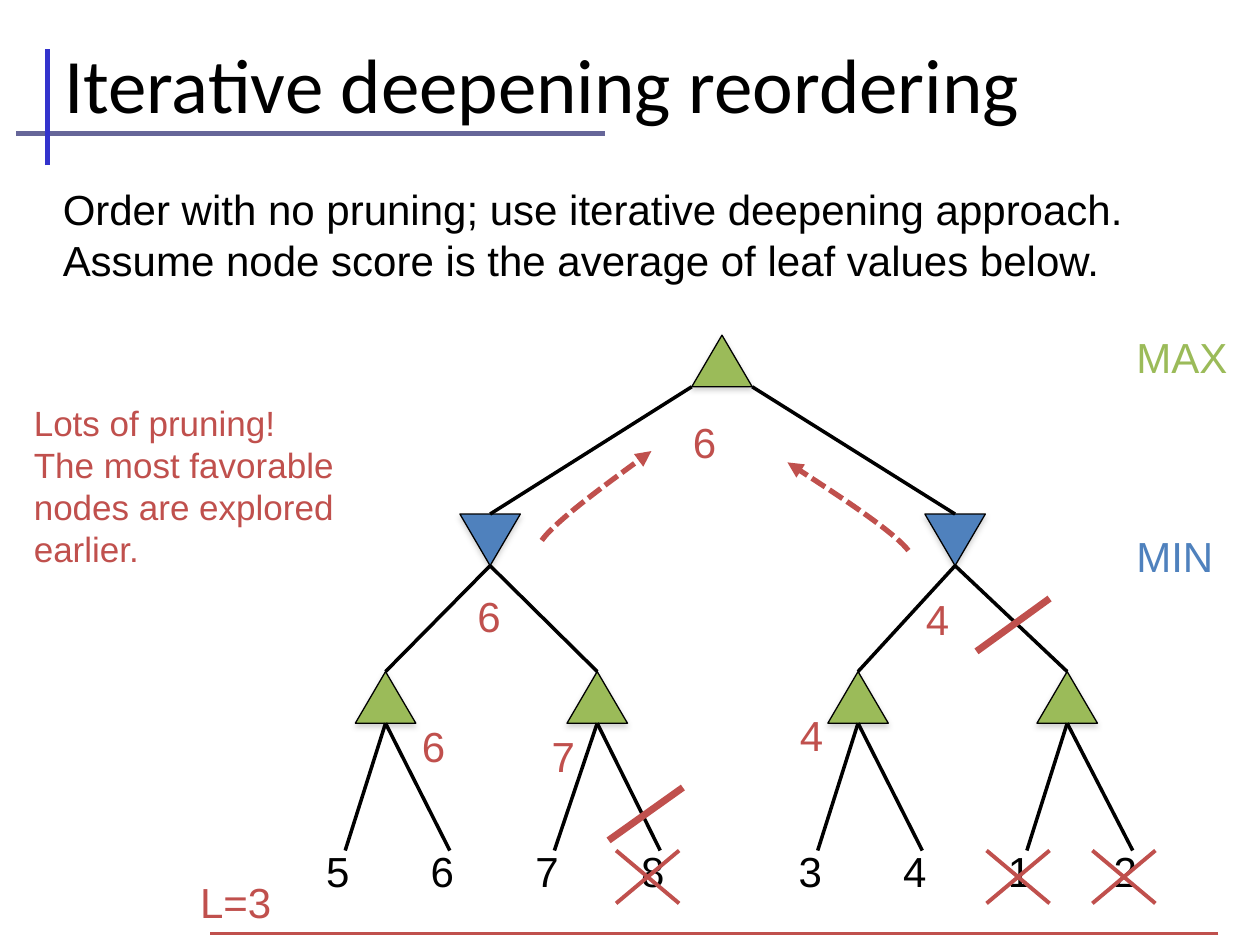
from lxml import etree
from pptx import Presentation
from pptx.dml.color import RGBColor
from pptx.enum.dml import MSO_LINE
from pptx.enum.shapes import MSO_CONNECTOR, MSO_SHAPE
from pptx.enum.text import MSO_ANCHOR, MSO_AUTO_SIZE
from pptx.oxml.ns import qn
from pptx.util import Inches, Pt

LINE = MSO_CONNECTOR.STRAIGHT
TRI = MSO_SHAPE.ISOSCELES_TRIANGLE
DASH = MSO_LINE.SQUARE_DOT
MID = MSO_ANCHOR.MIDDLE
GROW = MSO_AUTO_SIZE.SHAPE_TO_FIT_TEXT

WIDE, HIGH = Inches(10), Inches(7.5)
COLS = 100
BLACK, RED, GREEN, BLUE = "000000", "C0504D", "9BBB59", "4F81BD"
TRI_W, TRI_H = 4.8, 4.1
ROOT_X, ROOT_Y = 57.3, 26.6
MIN_Y, MAX_Y, LEAF_Y = 40.8, 53.3, 67.5
TREE = [
    (38.9, [(30.6, [(27.4, "5"), (35.7, "6")]),
            (47.4, [(44, "7"), (52.4, "8")])]),
    (75.8, [(68.1, [(64.9, "3"), (73.2, "4")]),
            (84.7, [(81.5, "1"), (89.9, "2")])]),
]
SCORES = [(54, 32.6, "6"), (36.9, 46.4, "6"), (72.5, 46.6, "4"),
          (32.5, 56.7, "6"), (42.8, 57.5, "7"), (62.5, 55.8, "4")]
CUTS = [(83.3, 47.5, 77.5, 51.7), (54.2, 62.5, 48.3, 66.7)]
CROSSES = [48.9, 78.3, 86.7]
CURVES = [
    [(43, 42.9), (44.1, 41.3), (51.7, 35.8), (51.7, 35.8)],
    [(72.1, 43.7), (70.9, 42.1), (62.5, 36.7), (62.5, 36.7)],
]


def grid(*vals):
    return [round(val * WIDE / COLS) for val in vals]


def tint(hexa):
    return RGBColor.from_string(hexa)


def stroke(item, hexa, size):
    item.line.color.rgb = tint(hexa)
    item.line.width = Pt(size)


def line(page, x1, y1, x2, y2, hexa=BLACK, size=2):
    item = page.shapes.add_connector(LINE, *grid(x1, y1, x2, y2))
    stroke(item, hexa, size)
    etree.SubElement(item._element.spPr, qn("a:effectLst"))
    return item


def label(page, box, rows, size=24, hexa=BLACK, font="Arial", wrap=False, grow=True):
    item = page.shapes.add_textbox(*grid(*box))
    frame = item.text_frame
    frame.word_wrap = wrap
    if grow:
        frame.auto_size = GROW
    else:
        frame.vertical_anchor = MID
    for i, row in enumerate(rows):
        para = frame.add_paragraph() if i else frame.paragraphs[0]
        run = para.add_run()
        run.text = row
        run.font.name = font
        run.font.size = Pt(size)
        run.font.color.rgb = tint(hexa)


def digit(page, x, y, text, hexa=BLACK):
    label(page, (x, y, 3.9, 5.1), [text], hexa=hexa)


def shade(item):
    item.shadow.inherit = False
    glow = item._element.spPr.find(qn("a:effectLst"))
    cast = etree.SubElement(glow, qn("a:outerShdw"), blurRad=str(Pt(3.1)),
                            dist=str(Pt(1.8)), dir="5400000", rotWithShape="0")
    tone = etree.SubElement(cast, qn("a:srgbClr"), val="808080")
    etree.SubElement(tone, qn("a:alpha"), val="35000")


def node(page, x, y, hexa, flip=False):
    item = page.shapes.add_shape(TRI, *grid(x - TRI_W / 2, y, TRI_W, TRI_H))
    item.fill.solid()
    item.fill.fore_color.rgb = tint(hexa)
    stroke(item, BLACK, 0.75)
    shade(item)
    if flip:
        item._element.spPr.find(qn("a:xfrm")).set("flipV", "1")
    return item


def curve(page, dots):
    dots = [tuple(grid(*dot)) for dot in dots]
    pen = page.shapes.build_freeform(*dots[0])
    pen.add_line_segments(dots[1:], close=False)
    item = pen.convert_to_shape()
    item.fill.background()
    item.shadow.inherit = False
    stroke(item, RED, 3)
    item.line.dash_style = DASH
    props = item._element.spPr
    etree.SubElement(props.find(qn("a:ln")), qn("a:tailEnd"), type="triangle")
    legs = list(props.iter(qn("a:lnTo")))
    bend = etree.SubElement(legs[0].getparent(), qn("a:cubicBezTo"))
    for leg in legs:
        bend.append(leg[0])
        leg.getparent().remove(leg)


def cross(page, x):
    top, low = LEAF_Y, LEAF_Y + 4.2
    line(page, x, top, x + 5, low, RED, 2.25)
    line(page, x + 5, top, x, low, RED, 2.25)


def tree(page):
    node(page, ROOT_X, ROOT_Y, GREEN)
    for side, (x, kids) in zip((-1, 1), TREE):
        node(page, x, MIN_Y, BLUE, flip=True)
        line(page, ROOT_X + side * TRI_W / 2, ROOT_Y + TRI_H, x, MIN_Y)
        for kid, leaves in kids:
            peak = node(page, kid, MAX_Y, GREEN)
            edge = line(page, x, MIN_Y + TRI_H, kid, MAX_Y)
            edge.end_connect(peak, 0)
            for leaf, text in leaves:
                line(page, kid, MAX_Y + TRI_H, leaf, LEAF_Y)
                digit(page, leaf - 2.5, 66.6, text)


def main():
    deck = Presentation()
    deck.slide_width, deck.slide_height = WIDE, HIGH
    page = deck.slides.add_slide(deck.slide_layouts[6])
    line(page, 1.3, 10.6, 48, 10.6, "666699", 3)
    line(page, 3.8, 13.1, 3.8, 3.9, "3333CC", 3)
    label(page, (4.1, 1, 89.2, 11.2), ["Iterative deepening reordering"],
          44, font="Calibri", wrap=True, grow=False)
    label(page, (4, 14.1, 87, 9.1), [
        "Order with no pruning; use iterative deepening approach.",
        "Assume node score is the average of leaf values below."])
    tree(page)
    label(page, (89.2, 25.8, 9.3, 5.1), ["MAX"], hexa=GREEN)
    label(page, (89.2, 41.6, 8.2, 5.1), ["MIN"], hexa=BLUE)
    label(page, (1.7, 31.4, 30, 14.5), [
        "Lots of pruning!",
        "The most favorable nodes are explored earlier."], 20, RED, wrap=True)
    label(page, (14.9, 69.1, 7.7, 5.1), ["L=3"], hexa=RED)
    line(page, 96.7, 74.1, 16.7, 74.1, RED)
    for x, y, text in SCORES:
        digit(page, x, y, text, RED)
    for dots in CURVES:
        curve(page, dots)
    for ends in CUTS:
        line(page, *ends, RED, 4)
    for x in CROSSES:
        cross(page, x)
    deck.save("out.pptx")


if __name__ == "__main__":
    main()
